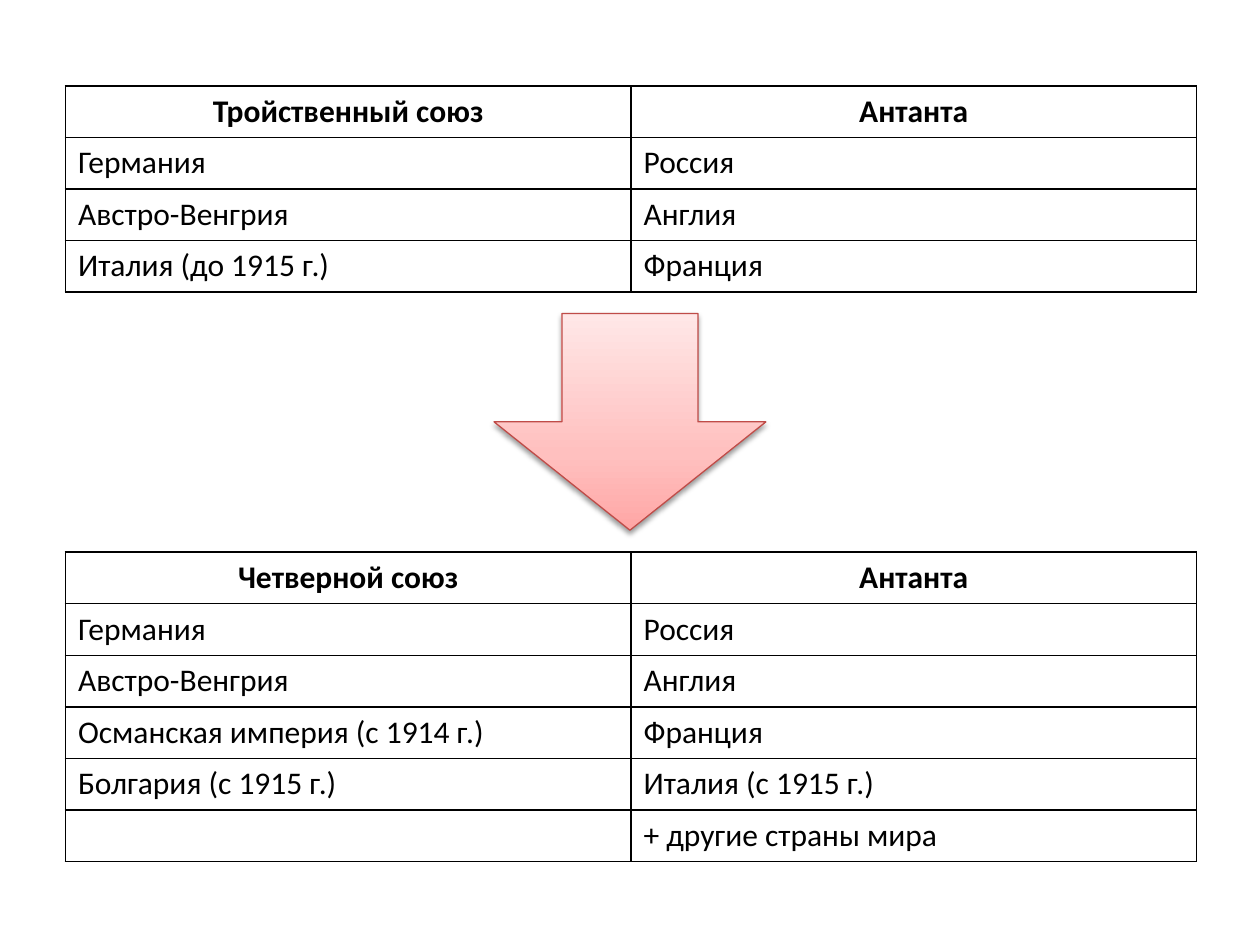
from copy import deepcopy
from dataclasses import dataclass

from pptx import Presentation
from pptx.dml.color import RGBColor as Rgb
from pptx.enum.shapes import MSO_SHAPE as Preset
from pptx.enum.text import PP_ALIGN as Align
from pptx.oxml.ns import qn
from pptx.slide import Slide
from pptx.table import _Cell as Cell
from pptx.util import Cm, Pt
from lxml.etree import SubElement, Element


@dataclass(frozen=True)
class Theme:
    font: str = "Calibri"
    text_size: float = 18
    text: str = "000000"
    border: str = "000000"
    border_width: float = 1
    arrow_line: str = "BF4C48"
    arrow_line_width: float = 0.75
    arrow_stops: tuple = ((0, "FFA6A5"), (0.35, "FFC0BF"), (1, "FFE7E7"))
    shadow: str = "000000"


@dataclass(frozen=True)
class Alliances:
    top: float
    rows: tuple[tuple[str, str], ...]


THEME = Theme()
LEFT, COLUMN_WIDTH, ROW_HEIGHT = 1.32, 11.4, 1.04

BEFORE = Alliances(1.73, (
    ("Тройственный союз", "Антанта"),
    ("Германия", "Россия"),
    ("Австро-Венгрия", "Англия"),
    ("Италия (до 1915 г.)", "Франция"),
))
AFTER = Alliances(11.13, (
    ("Четверной союз", "Антанта"),
    ("Германия", "Россия"),
    ("Австро-Венгрия", "Англия"),
    ("Османская империя (с 1914 г.)", "Франция"),
    ("Болгария (с 1915 г.)", "Италия (с 1915 г.)"),
    ("", "+ другие страны мира"),
))


def draw_borders(cell: Cell) -> None:
    properties = cell._tc.get_or_add_tcPr()
    for position, side in enumerate(("lnL", "lnR", "lnT", "lnB")):
        border = Element(qn(f"a:{side}"), w=str(Pt(THEME.border_width)))
        fill = SubElement(border, qn("a:solidFill"))
        SubElement(fill, qn("a:srgbClr"), val=THEME.border)
        properties.insert(position, border)


def fill_cell(cell: Cell, wording: str, heading: bool) -> None:
    cell.fill.background()
    draw_borders(cell)
    cell.text = wording
    paragraph = cell.text_frame.paragraphs[0]
    paragraph.alignment = Align.CENTER if heading else Align.LEFT
    paragraph.font.name = THEME.font
    paragraph.font.size = Pt(THEME.text_size)
    paragraph.font.bold = heading
    paragraph.font.color.rgb = Rgb.from_string(THEME.text)


def draw_alliances(slide: Slide, alliances: Alliances) -> None:
    count = len(alliances.rows)
    table = slide.shapes.add_table(
        count, 2, Cm(LEFT), Cm(alliances.top),
        Cm(2 * COLUMN_WIDTH), Cm(count * ROW_HEIGHT),
    ).table
    table.first_row = False
    table.horz_banding = False
    for row, countries in enumerate(alliances.rows):
        for column, country in enumerate(countries):
            fill_cell(table.cell(row, column), country, heading=row == 0)


def draw_arrow(slide: Slide) -> None:
    arrow = slide.shapes.add_shape(
        Preset.DOWN_ARROW, Cm(9.96), Cm(6.32), Cm(5.48), Cm(4.37))
    arrow.line.color.rgb = Rgb.from_string(THEME.arrow_line)
    arrow.line.width = Pt(THEME.arrow_line_width)

    arrow.fill.gradient()
    arrow.fill.gradient_angle = 90
    stop_list = arrow._element.spPr.find(qn("a:gradFill")).find(qn("a:gsLst"))
    stop_list.append(deepcopy(stop_list[0]))
    for stop, (position, color) in zip(arrow.fill.gradient_stops, THEME.arrow_stops):
        stop.position = position
        stop.color.rgb = Rgb.from_string(color)

    arrow.shadow.inherit = False
    effects = arrow._element.spPr.find(qn("a:effectLst"))
    shadow = SubElement(
        effects, qn("a:outerShdw"), blurRad=str(Pt(3.1)), dist=str(Pt(1.6)),
        dir="5400000", rotWithShape="0")
    shade = SubElement(shadow, qn("a:srgbClr"), val=THEME.shadow)
    SubElement(shade, qn("a:alpha"), val="38000")


def main() -> None:
    deck = Presentation()
    deck.slide_width, deck.slide_height = Cm(25.4), Cm(19.05)
    slide = deck.slides.add_slide(deck.slide_layouts[6])
    for alliances in (BEFORE, AFTER):
        draw_alliances(slide, alliances)
    draw_arrow(slide)
    deck.save("out.pptx")


if __name__ == "__main__":
    main()
